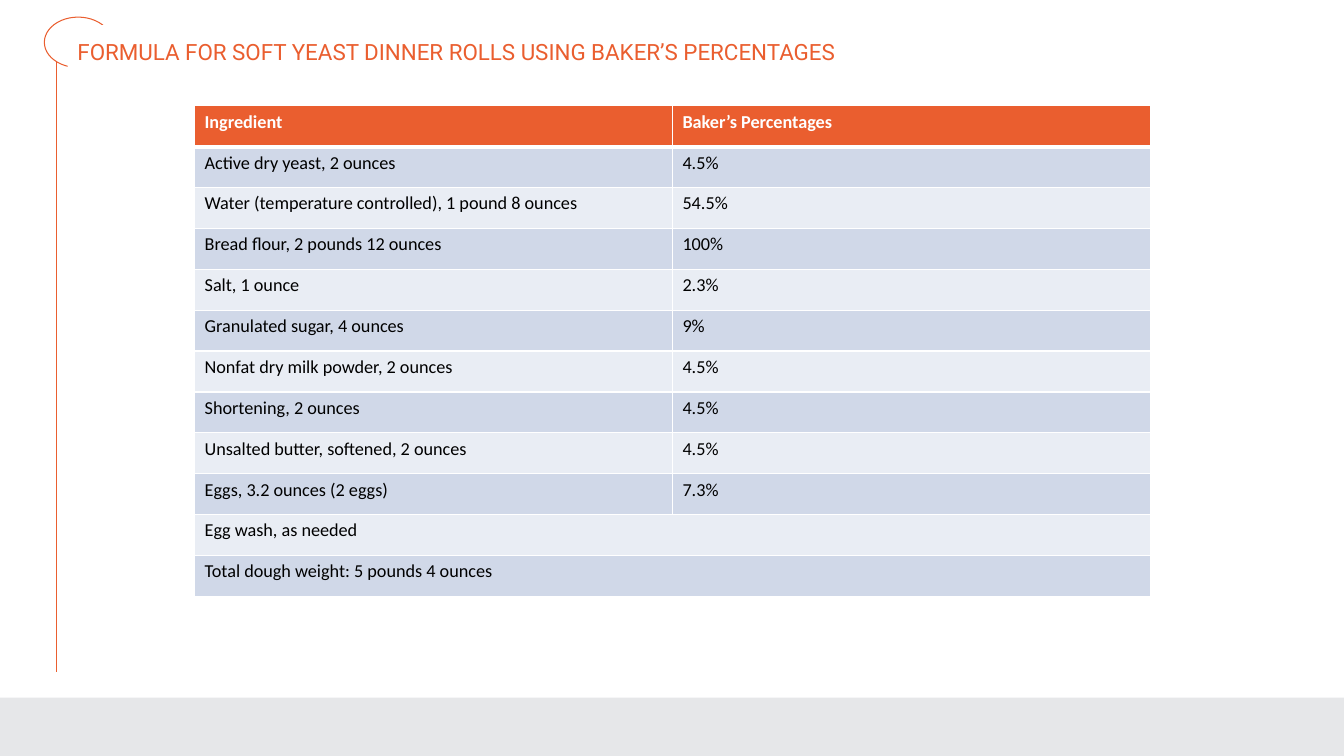
from pptx import Presentation, util as u
from pptx.dml.color import RGBColor
from pptx.enum import shapes, text
from pptx.oxml import parse_xml
from pptx.oxml.ns import nsdecls

ORANGE, WHITE, GREY, BLACK = "EA5E2F", "FFFFFF", "E6E7E9", "000000"
BANDS = ("D0D8E8", "E9EDF4")
TITLE = "FORMULA FOR SOFT YEAST DINNER ROLLS USING BAKER’S PERCENTAGES"
FORMULA = [
    ("Ingredient", "Baker’s Percentages"),
    ("Active dry yeast, 2 ounces", "4.5%"),
    ("Water (temperature controlled), 1 pound 8 ounces", "54.5%"),
    ("Bread flour, 2 pounds 12 ounces", "100%"),
    ("Salt, 1 ounce", "2.3%"),
    ("Granulated sugar, 4 ounces", "9%"),
    ("Nonfat dry milk powder, 2 ounces", "4.5%"),
    ("Shortening, 2 ounces", "4.5%"),
    ("Unsalted butter, softened, 2 ounces", "4.5%"),
    ("Eggs, 3.2 ounces (2 eggs)", "7.3%"),
    ("Egg wash, as needed",),
    ("Total dough weight: 5 pounds 4 ounces",),
]
COLUMN_WIDTH, ROW_HEIGHT = 4.74, 4.87 / len(FORMULA)


def rgb(value):
    return RGBColor.from_string(value)


def paint(fill, color):
    fill.solid()
    fill.fore_color.rgb = rgb(color)


def add_span(para, words, color, **formats):
    span = para.add_run()
    span.text = words
    span.font.color.rgb = rgb(color)
    for name, value in formats.items():
        setattr(span.font, name, value)


def add_block(page, kind, place, color, outline=None):
    block = page.shapes.add_shape(kind, *map(u.Inches, place))
    block.shadow.inherit = False
    paint(block.fill, color)
    if outline:
        block.line.color.rgb = rgb(outline)
        block.line.width = u.Pt(0.75)
    else:
        block.line.fill.background()


def add_rule(page, start, end, color):
    rule = page.shapes.add_connector(
        shapes.MSO_CONNECTOR.STRAIGHT, *map(u.Inches, start + end))
    rule.line.color.rgb = rgb(color)
    rule.line.width = u.Pt(0.75)
    rule._element.spPr.append(parse_xml(f"<a:effectLst {nsdecls('a')}/>"))


def add_title(page, place, words):
    box = page.shapes.add_textbox(*map(u.Inches, place))
    frame = box.text_frame
    frame.word_wrap = True
    frame.vertical_anchor = text.MSO_ANCHOR.MIDDLE
    para = frame.paragraphs[0]
    para.line_spacing = 0.5
    add_span(para, words, ORANGE, name="Roboto", size=u.Pt(16))


def add_borders(cell, **widths):
    """Draw white cell edges; the keys are L, R, T and B, the widths points."""
    properties = cell._tc.get_or_add_tcPr()
    for side, width in widths.items():
        properties.append(parse_xml(
            f'<a:ln{side} {nsdecls("a")} w="{u.Pt(width)}"><a:solidFill>'
            f'<a:srgbClr val="{WHITE}"/></a:solidFill></a:ln{side}>'))


def add_formula_table(page, left, top):
    table = page.shapes.add_table(
        len(FORMULA), 2, u.Inches(left), u.Inches(top),
        u.Inches(2 * COLUMN_WIDTH), u.Inches(ROW_HEIGHT * len(FORMULA))).table
    for column in table.columns:
        column.width = u.Inches(COLUMN_WIDTH)
    for index, entries in enumerate(FORMULA):
        header = index == 0
        table.rows[index].height = u.Inches(ROW_HEIGHT)
        for cell in table.rows[index].cells:
            add_borders(cell, L=1, R=1, T=3 if index == 1 else 1, B=3 if header else 1)
            paint(cell.fill, ORANGE if header else BANDS[(index - 1) % 2])
        if len(entries) == 1:
            table.cell(index, 0).merge(table.cell(index, 1))
        for column, words in enumerate(entries):
            add_span(table.cell(index, column).text_frame.paragraphs[0], words,
                     WHITE if header else BLACK,
                     name="Calibri", size=u.Pt(13), bold=header)


def main():
    deck = Presentation()
    deck.slide_width, deck.slide_height = u.Inches(13.33), u.Inches(7.5)
    page = deck.slides.add_slide(deck.slide_layouts[6])
    kinds = shapes.MSO_SHAPE
    add_rule(page, (0.56, 0.42), (0.56, 6.67), ORANGE)
    add_block(page, kinds.OVAL, (0.44, 0.17, 0.67, 0.5), WHITE, ORANGE)
    add_block(page, kinds.RECTANGLE, (0.67, 0.25, 2.22, 0.5), WHITE)
    add_block(page, kinds.RECTANGLE, (0, 6.92, 13.33, 0.58), GREY)
    add_title(page, (0.67, 0.3, 12, 0.53), TITLE)
    add_formula_table(page, 1.93, 1.05)
    deck.save("out.pptx")


if __name__ == "__main__":
    main()
